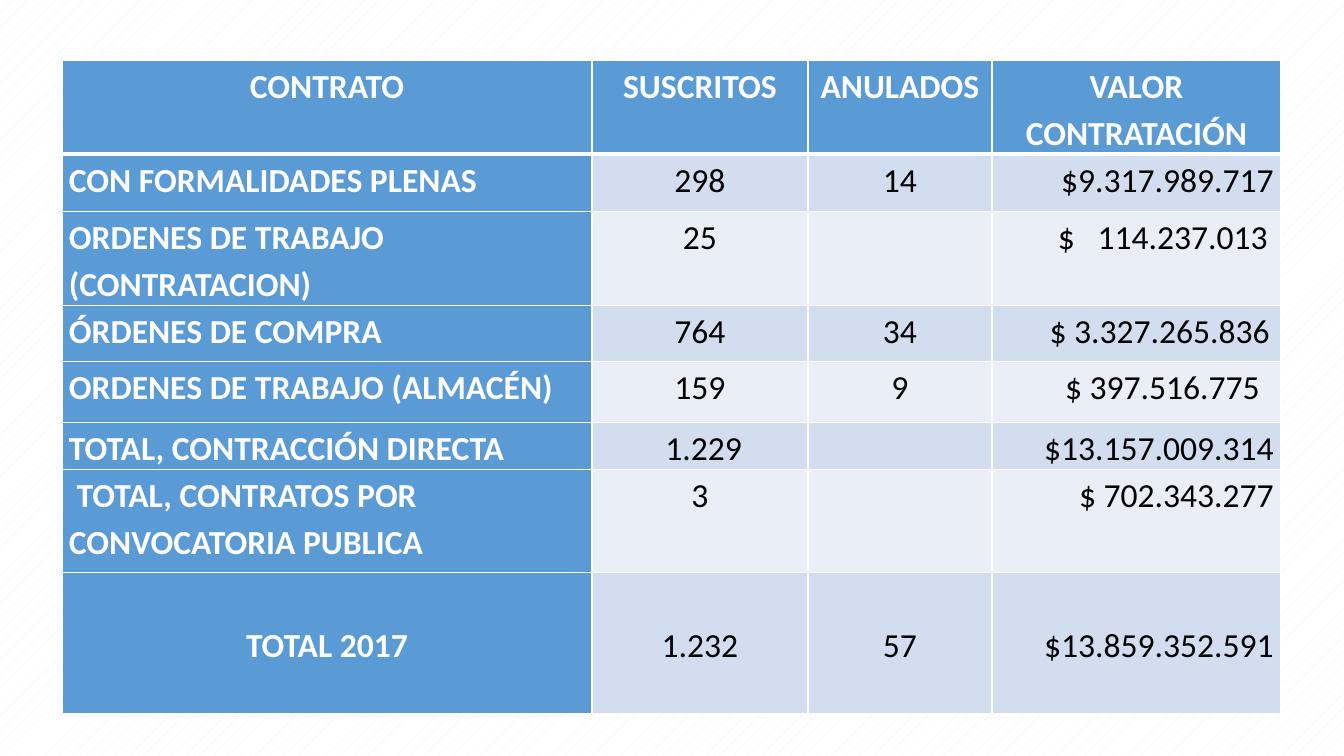
from dataclasses import dataclass

import pptx
import pptx.dml.color
import pptx.enum.dml
import pptx.enum.text
import pptx.oxml
import pptx.oxml.ns
import pptx.util

ALIGN = pptx.enum.text.PP_ALIGN
ANCHOR = pptx.enum.text.MSO_ANCHOR


@dataclass
class Theme:
    font: str = "Calibri"
    size: int = 24
    line_spacing: float = 1.15
    inset: int = 7
    thin: int = 1
    thick: int = 3
    white: str = "FFFFFF"
    black: str = "000000"
    header: str = "5B9BD5"
    band_dark: str = "D2DEEF"
    band_light: str = "EAEFF7"


THEME = Theme()


def px(length):
    return pptx.util.Emu(round(length * 914400 / 100.8))


def rgb(value):
    return pptx.dml.color.RGBColor.from_string(value)


def write(frame, text, *, color, bold=False, align=ALIGN.LEFT, gap=0):
    """Fill a frame with one paragraph; gap widens its first space, in points."""
    para = frame.paragraphs[0]
    para.alignment = align
    para.line_spacing = THEME.line_spacing
    for part in text.partition(" ") if gap else [text]:
        span = para.add_run()
        span.text = part
        span.font.name = THEME.font
        span.font.size = pptx.util.Pt(THEME.size)
        span.font.bold = bold
        span.font.color.rgb = rgb(color)
        if part == " ":
            span.font._element.set("spc", str(round(gap * 100)))


class SlideBuilder:
    def __init__(self, deck, theme):
        self.theme = theme
        self.page = deck.slides.add_slide(deck.slide_layouts[6])

    def background(self):
        fill = self.page.background.fill
        fill.patterned()
        fill.pattern = pptx.enum.dml.MSO_PATTERN.PERCENT_5
        fill.fore_color.rgb = rgb(self.theme.band_light)
        fill.back_color.rgb = rgb(self.theme.white)

    def table(self, left, top, widths, heights):
        frame = self.page.shapes.add_table(
            len(heights), len(widths), px(left), px(top),
            px(sum(widths)), px(sum(heights)))
        table = frame.table
        table.first_col = True
        for column, width in zip(table.columns, widths):
            column.width = px(width)
        for row, height in zip(table.rows, heights):
            row.height = px(height)
        return table

    def cell(self, cell, fill, *, top=1, bottom=1, right=0, anchor=ANCHOR.TOP):
        cell.margin_left = px(self.theme.inset)
        cell.margin_right = px(self.theme.inset + right)
        cell.margin_top = cell.margin_bottom = 0
        cell.vertical_anchor = anchor
        cell.fill.solid()
        cell.fill.fore_color.rgb = rgb(fill)
        # Borders come before the fill in the cell properties
        sides = {"L": self.theme.thin, "R": self.theme.thin, "T": top, "B": bottom}
        for index, (side, points) in enumerate(sides.items()):
            cell._tc.get_or_add_tcPr().insert(index, pptx.oxml.parse_xml(
                f'<a:ln{side} {pptx.oxml.ns.nsdecls("a")} w="{pptx.util.Pt(points)}">'
                f'<a:solidFill><a:srgbClr val="{self.theme.white}"/></a:solidFill>'
                f'</a:ln{side}>'))


CONTRACTS = [
    ("CONTRATO", "SUSCRITOS", "ANULADOS", "VALOR CONTRATACIÓN"),
    ("CON FORMALIDADES PLENAS", "298", "14", "$9.317.989.717"),
    ("ORDENES DE TRABAJO (CONTRATACION)", "25", "", "$ 114.237.013"),
    ("ÓRDENES DE COMPRA", "764", "34", "$ 3.327.265.836"),
    ("ORDENES DE TRABAJO (ALMACÉN)", "159", "9", "$ 397.516.775"),
    ("TOTAL, CONTRACCIÓN DIRECTA", " 1.229", "", "$13.157.009.314"),
    (" TOTAL, CONTRATOS POR CONVOCATORIA PUBLICA", "3", "", "$ 702.343.277"),
    ("TOTAL 2017", "1.232", "57", "$13.859.352.591"),
]
COLUMN_WIDTHS = [530, 216, 184, 289]
ROW_HEIGHTS = [94, 57, 94, 56, 61, 47, 103, 141]
VALUE_INSETS = {2: 6, 3: 4, 4: 14}  # extra right inset of some amounts, by row
VALUE_GAPS = {2: 10.8}  # wider gap after the currency sign, by row


def main():
    deck = pptx.Presentation()
    deck.slide_width, deck.slide_height = px(1344), px(756)
    slide = SlideBuilder(deck, THEME)
    slide.background()

    # Contract table: header row and column, banded body
    table = slide.table(62, 60, COLUMN_WIDTHS, ROW_HEIGHTS)
    last = len(CONTRACTS) - 1
    for r, record in enumerate(CONTRACTS):
        band = THEME.band_dark if r % 2 else THEME.band_light
        for c, text in enumerate(record):
            heading = r == 0 or c == 0
            amount = r > 0 and c == 3
            cell = table.cell(r, c)
            slide.cell(
                cell, THEME.header if heading else band,
                top=THEME.thick if r == 1 else THEME.thin,
                bottom=THEME.thick if r == 0 else THEME.thin,
                right=VALUE_INSETS.get(r, 0) if amount else 0,
                anchor=ANCHOR.MIDDLE if r == last else ANCHOR.TOP)
            if amount:
                align = ALIGN.RIGHT
            elif c == 0 and 0 < r < last:
                align = ALIGN.LEFT
            else:
                align = ALIGN.CENTER
            if text:
                write(cell.text_frame, text, align=align, bold=heading,
                      color=THEME.white if heading else THEME.black,
                      gap=VALUE_GAPS.get(r, 0) if amount else 0)

    deck.save("out.pptx")


if __name__ == "__main__":
    main()
